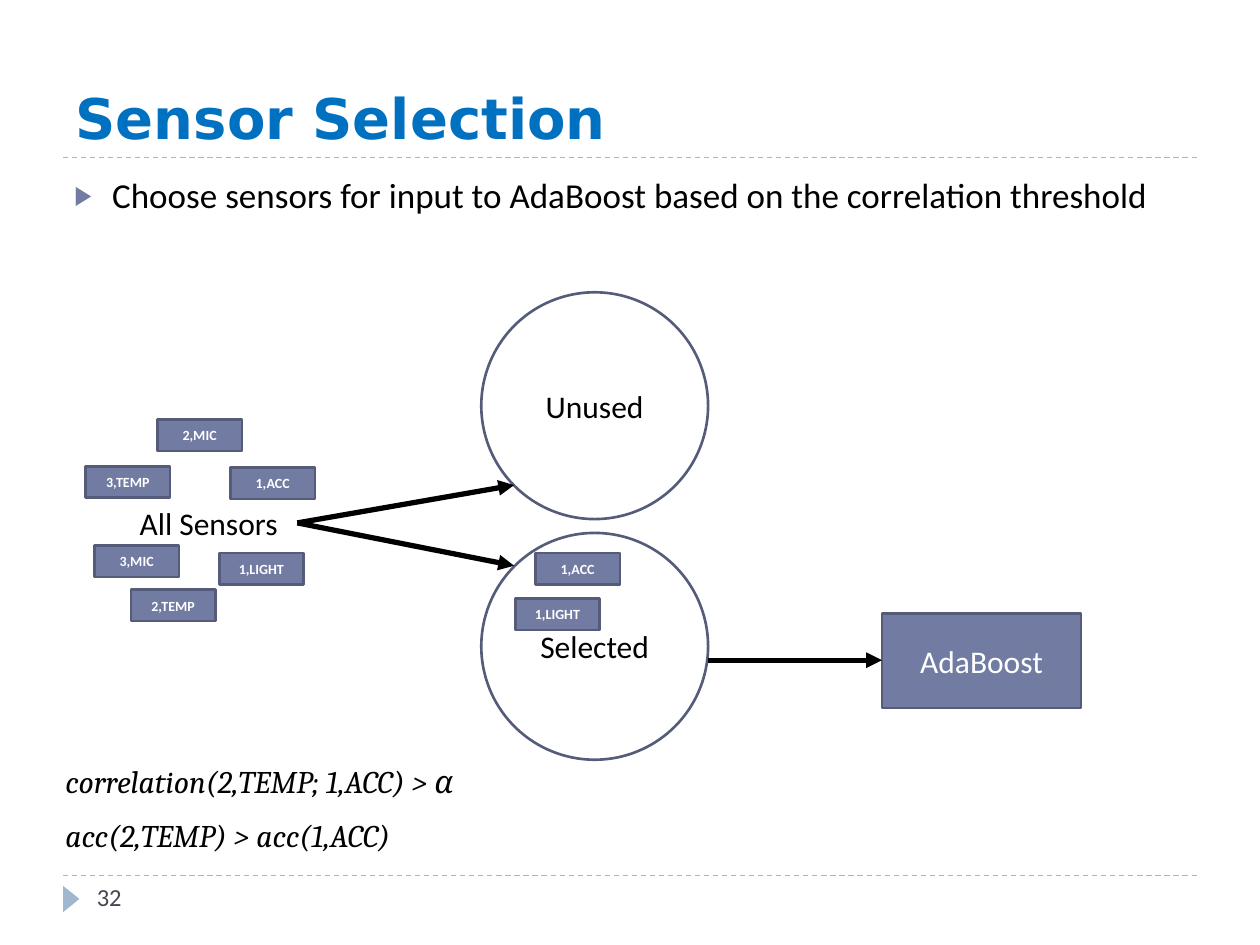
import lxml.etree
import pptx
import pptx.dml.color
import pptx.enum.dml
import pptx.enum.shapes
import pptx.enum.text
import pptx.oxml
import pptx.oxml.ns
import pptx.util
from dataclasses import dataclass

Inches = pptx.util.Inches
Pt = pptx.util.Pt
SHAPE = pptx.enum.shapes.MSO_SHAPE
ANCHOR = pptx.enum.text.MSO_ANCHOR
ALIGN = pptx.enum.text.PP_ALIGN


@dataclass(frozen=True)
class Theme:
    title: str = "0070C0"
    ink: str = "000000"
    paper: str = "FFFFFF"
    accent: str = "727CA3"
    outline: str = "545C79"
    rule: str = "9FB8CD"
    muted: str = "464653"
    title_font: str = "DejaVu Sans"
    body_font: str = "Calibri"
    math_font: str = "Cambria"
    title_size: int = 32
    body_size: int = 20
    label_size: int = 18
    number_size: int = 14
    tag_size: int = 8


def rgb(value):
    return pptx.dml.color.RGBColor.from_string(value)


def add_xml(parent, tag, **attributes):
    child = lxml.etree.SubElement(parent, pptx.oxml.ns.qn(tag))
    for name, value in attributes.items():
        child.set(name, value)
    return child


class SlideBuilder:
    def __init__(self, slide, theme):
        self.slide = slide
        self.theme = theme

    def add_words(self, frame, text, size, color, font=None, bold=False, italic=False):
        paragraph = frame.paragraphs[0]
        run = paragraph.add_run()
        run.text = text
        run.font.name = font or self.theme.body_font
        run.font.size = Pt(size)
        run.font.bold = bold
        run.font.italic = italic
        run.font.color.rgb = rgb(color)
        return paragraph

    def place(self, holder, left, top, width, height, anchor):
        holder.left, holder.top = Inches(left), Inches(top)
        holder.width, holder.height = Inches(width), Inches(height)
        frame = holder.text_frame
        frame.auto_size = pptx.enum.text.MSO_AUTO_SIZE.NONE
        frame.vertical_anchor = anchor
        return frame

    def title(self, text):
        frame = self.place(self.slide.shapes.title, 0.5, 0.17, 9, 1.08, ANCHOR.BOTTOM)
        paragraph = self.add_words(frame, text, self.theme.title_size, self.theme.title,
                                   self.theme.title_font, bold=True)
        paragraph.alignment = ALIGN.LEFT

    def bullet(self, text):
        frame = self.place(self.slide.placeholders[1], 0.49, 1.33, 9, 1, ANCHOR.TOP)
        paragraph = self.add_words(frame, text, self.theme.body_size, self.theme.ink)
        paragraph.space_before = Pt(6)
        properties = paragraph._p.get_or_add_pPr()
        properties.set("marL", str(Inches(0.3)))
        properties.set("indent", str(-Inches(0.3)))
        bullet_color = add_xml(properties, "a:buClr")
        add_xml(bullet_color, "a:srgbClr", val=self.theme.accent)
        add_xml(properties, "a:buSzPct", val="76000")
        add_xml(properties, "a:buChar", char="▶")

    def text(self, text, left, top, width, size, color, font=None, italic=False):
        box = self.slide.shapes.add_textbox(Inches(left), Inches(top),
                                            Inches(width), Inches(0.4))
        box.text_frame.word_wrap = False
        self.add_words(box.text_frame, text, size, color, font, italic=italic)

    def shape(self, kind, left, top, width, height, fill=None, outline=None):
        shape = self.slide.shapes.add_shape(kind, Inches(left), Inches(top),
                                            Inches(width), Inches(height))
        shape.shadow.inherit = False
        if fill:
            shape.fill.solid()
            shape.fill.fore_color.rgb = rgb(fill)
        else:
            shape.fill.background()
        if outline:
            shape.line.color.rgb = rgb(outline)
            shape.line.width = Pt(1.5)
        else:
            shape.line.fill.background()
        return shape

    def node(self, kind, text, left, top, width, height, size, color, fill=None, bold=False):
        node = self.shape(kind, left, top, width, height, fill, self.theme.outline)
        node.text_frame.vertical_anchor = ANCHOR.MIDDLE
        paragraph = self.add_words(node.text_frame, text, size, color, bold=bold)
        paragraph.alignment = ALIGN.CENTER

    def box(self, text, left, top, width, height, size, bold=False):
        self.node(SHAPE.RECTANGLE, text, left, top, width, height, size,
                  self.theme.paper, self.theme.accent, bold)

    def sensor(self, text, left, top):
        self.box(text, left, top, 0.67, 0.25, self.theme.tag_size, bold=True)

    def group(self, text, top):
        self.node(SHAPE.OVAL, text, 3.82, top, 1.8, 1.8,
                  self.theme.label_size, self.theme.ink)

    def line(self, start, end, color, width):
        line = self.slide.shapes.add_connector(
            pptx.enum.shapes.MSO_CONNECTOR.STRAIGHT, *map(Inches, start + end))
        line.line.color.rgb = rgb(color)
        line.line.width = Pt(width)
        add_xml(line._element.spPr, "a:effectLst")
        return line

    def rule(self, top):
        rule = self.line((0.5, top), (9.5, top), self.theme.rule, 0.75)
        rule.line.dash_style = pptx.enum.dml.MSO_LINE.DASH

    def arrow(self, start, end):
        arrow = self.line(start, end, self.theme.ink, 3)
        add_xml(arrow.line._get_or_add_ln(), "a:tailEnd", type="triangle")


def main():
    deck = pptx.Presentation()
    deck.slide_width, deck.slide_height = Inches(10), Inches(7.5)
    theme = Theme()
    page = SlideBuilder(deck.slides.add_slide(deck.slide_layouts[1]), theme)

    # Page frame and number
    for top in (6.95, 1.25):
        page.rule(top)
    marker = page.shape(SHAPE.ISOSCELES_TRIANGLE, 0.46, 7.07, 0.21, 0.13, theme.rule)
    marker.rotation = 90
    page.text("32", 0.67, 6.95, 2.17, theme.number_size, theme.muted)

    # Heading and statement
    page.title("Sensor Selection")
    page.bullet("Choose sensors for input to AdaBoost based on the correlation threshold")

    # Flow from all sensors through the two groups to the classifier
    page.box("AdaBoost", 7, 4.87, 1.58, 0.75, theme.label_size)
    page.text("All Sensors", 1.01, 3.95, 1.35, theme.label_size, theme.ink)
    page.group("Unused", 2.32)
    page.group("Selected", 4.23)
    sensors_exit = (2.36, 4.15)
    page.arrow(sensors_exit, (4.08, 3.85))
    page.arrow(sensors_exit, (4.08, 4.49))
    page.arrow((5.62, 5.24), (7, 5.24))

    # Sensors: the available pool, then the selected pair
    for name, left, top in (
        ("2,MIC", 1.25, 3.33),
        ("1,ACC", 1.83, 3.71),
        ("3,MIC", 0.75, 4.33),
        ("3,TEMP", 0.68, 3.7),
        ("2,TEMP", 1.04, 4.68),
        ("1,LIGHT", 1.74, 4.39),
        ("1,ACC", 4.25, 4.39),
        ("1,LIGHT", 4.09, 4.75),
    ):
        page.sensor(name, left, top)

    # Selection conditions
    for condition, top, width in (
        ("correlation(2,TEMP; 1,ACC) > α", 6, 3.55),
        ("acc(2,TEMP) > acc(1,ACC)", 6.43, 3),
    ):
        page.text(condition, 0.42, top, width, theme.label_size, theme.ink,
                  theme.math_font, italic=True)

    deck.save("out.pptx")


if __name__ == "__main__":
    main()
